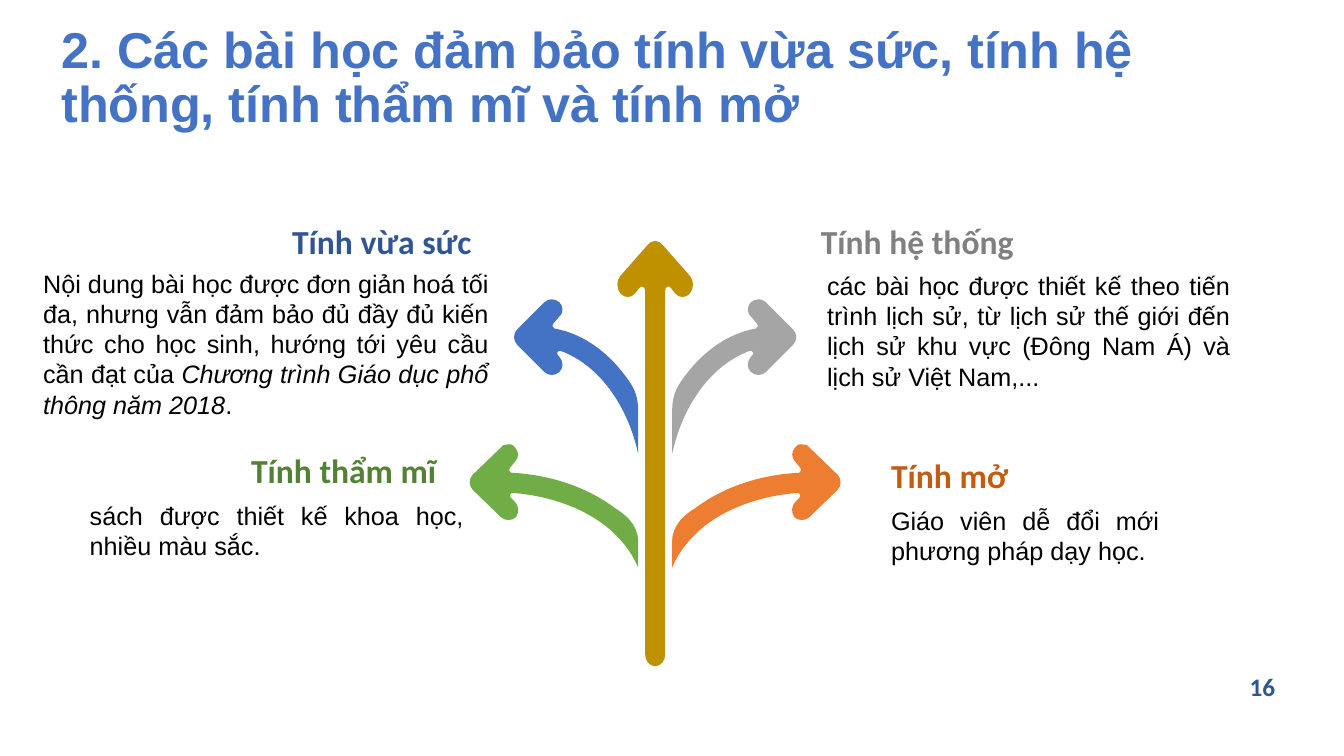
from itertools import pairwise

from lxml.etree import SubElement
from pptx import Presentation
from pptx.dml.color import RGBColor
from pptx.enum.text import MSO_ANCHOR as ANCHOR, PP_ALIGN as ALIGN
from pptx.oxml.ns import qn
from pptx.util import Pt

COLORS = {
    "title": "4472C4", "number": "2F5597", "body": "000000",
    "trunk": "BF9000", "upper_left": "4472C4", "upper_right": "A5A5A5",
    "lower_left": "70AD47", "lower_right": "ED7D31",
    "fit": "2F5597", "system": "808080", "beauty": "548235", "open": "C55A11",
}
AXIS = 468

UPPER_BRANCH = [
    (79.2, 265.7),
    (76.3, 268.6, 71.3, 268.6, 68.4, 265.7),
    (67, 264.2, 66.2, 262.8, 66.2, 260.6),
    (66.2, 258.5, 67, 256.3, 68.4, 254.9),
    (69.1, 254.2),
    (71.3, 252.7, 69.1, 249.8, 67.7, 250.6),
    (54, 255.6, 41, 265.7, 31, 280.1),
    (22.3, 292.3, 15.8, 307.4, 12.2, 324),
    (12.2, 292.3),
    (12.2, 285.1, 14.4, 277.9, 18.7, 272.2),
    (33.1, 251.3, 51.8, 238.3, 72, 234.7),
    (73.4, 234, 74.2, 231.8, 72.7, 231.1),
    (68.4, 226.1),
    (67, 225.4, 66.2, 223.2, 66.2, 221),
    (66.2, 218.9, 67, 217.4, 68.4, 216),
    (69.8, 214.6, 72, 213.8, 74.2, 213.8),
    (75.6, 213.8, 77.8, 214.6, 79.2, 216),
    (98.6, 235.4),
    (101.5, 238.3, 101.5, 243.4, 98.6, 246.2),
]
LOWER_BRANCH = [
    (130.3, 339.1),
    (133.2, 342, 133.2, 347, 130.3, 349.9),
    (110.2, 369.4),
    (107.3, 372.2, 102.2, 372.2, 99.4, 369.4),
    (97.2, 366.5, 97.2, 361.4, 100.1, 358.6),
    (103, 355.7),
    (104.4, 354.2, 103.7, 352.1, 101.5, 352.1),
    (76.3, 354.2, 52.6, 362.2, 35.3, 375.8),
    (24.5, 384.5, 16.6, 394.6, 12.2, 405.4),
    (12.2, 385.9),
    (12.2, 380.2, 15.1, 375.1, 18.7, 370.8),
    (21.6, 367.9, 25.2, 365, 28.8, 362.9),
    (49, 347.8, 74.9, 339.1, 103, 337.7),
    (104.4, 337, 105.1, 334.8, 103.7, 334.1),
    (100.1, 329.8),
    (97.2, 326.9, 97.2, 322.6, 100.1, 319.7),
    (101.5, 317.5, 103.7, 316.8, 105.8, 317.5),
    (108, 317.5, 109.4, 318.2, 110.2, 319.7),
]
TRUNK_HALF = [
    (0, 172.1),
    (2.2, 172.1, 4.3, 173.5, 5.4, 175),
    (25, 197.3),
    (27.7, 200.5, 27.7, 206, 24.8, 209.7),
    (22, 213, 17, 213, 14.5, 209.7),
    (10.8, 205.2),
    (9.4, 203.8, 7.2, 205.2, 7.2, 207.4),
    (7.2, 467.3),
    (7.2, 471.5, 4.3, 475.9, 0, 475.9),
]


def add_arrow(color, segments, side, bounds):
    near, top, far, bottom = bounds
    left, right = sorted(Pt(AXIS + side * x) for x in (near, far))
    top, bottom = Pt(top), Pt(bottom)
    builder = slide.shapes.build_freeform(left, top)
    builder.add_line_segments([(right, top), (right, bottom), (left, bottom)], close=True)
    arrow = builder.convert_to_shape()
    outline = next(arrow._element.iter(qn("a:path")))
    for corner in list(outline):
        outline.remove(corner)
    for index, segment in enumerate(segments):
        kind = "a:moveTo" if index == 0 else "a:lnTo" if len(segment) == 2 else "a:cubicBezTo"
        command = SubElement(outline, qn(kind))
        for x, y in zip(segment[::2], segment[1::2]):
            SubElement(command, qn("a:pt"), x=str(Pt(AXIS + side * x) - left), y=str(Pt(y) - top))
    SubElement(outline, qn("a:close"))
    arrow.shadow.inherit = False
    arrow.fill.solid()
    arrow.fill.fore_color.rgb = RGBColor.from_string(COLORS[color])
    arrow.line.fill.background()


def add_text(box, runs, align, anchor, margins, line_spacing, font):
    frame = slide.shapes.add_textbox(*[Pt(v) for v in box]).text_frame
    layout = {"word_wrap": True, "vertical_anchor": anchor,
              "margin_left": Pt(margins), "margin_right": Pt(margins),
              "margin_top": Pt(3.6), "margin_bottom": Pt(3.6)}
    for key, value in layout.items():
        setattr(frame, key, value)
    paragraph = frame.paragraphs[0]
    paragraph.alignment = align
    paragraph.line_spacing = line_spacing
    for words, italic in runs:
        run = paragraph.add_run()
        run.text = words
        run.font.color.rgb = RGBColor.from_string(COLORS[font["color"]])
        looks = {"name": font["name"], "size": Pt(font["size"]),
                 "bold": font["bold"], "italic": italic}
        for key, value in looks.items():
            setattr(run.font, key, value)


prs = Presentation()
prs.slide_width, prs.slide_height = Pt(960), Pt(540)
slide = prs.slides.add_slide(prs.slide_layouts[6])

add_text((36.7, 54.5, 842.4, 44.6),
         [("2. Các bài học đảm bảo tính vừa sức, tính hệ thống, tính thẩm mĩ và tính mở", False)],
         ALIGN.LEFT, ANCHOR.BOTTOM, 7.2, 0.9,
         {"name": "Arial", "size": 36, "bold": True, "color": "title"})
add_text((879.1, 475.9, 45.4, 28.8), [("16", False)],
         ALIGN.CENTER, ANCHOR.TOP, 7.2, 1.0,
         {"name": "Calibri", "size": 18, "bold": True, "color": "number"})

trunk = list(TRUNK_HALF)
for before, segment in reversed(list(pairwise(TRUNK_HALF))):
    knots = list(zip(segment[::2], segment[1::2]))
    backward = [*knots[:-1][::-1], before[-2:]]
    trunk.append(tuple(v for x, y in backward for v in (-x, y)))

upper_bounds = (12.2, 213.8, 100.8, 324)
lower_bounds = (12.2, 317.3, 132.5, 405.4)
add_arrow("upper_left", UPPER_BRANCH, -1, upper_bounds)
add_arrow("upper_right", UPPER_BRANCH, 1, upper_bounds)
add_arrow("trunk", trunk, 1, (-27.2, 172.1, 27.2, 475.9))
add_arrow("lower_right", LOWER_BRANCH, 1, lower_bounds)
add_arrow("lower_left", LOWER_BRANCH, -1, lower_bounds)

qualities = [
    ("open", "Tính mở", ALIGN.LEFT, (636.5, 321.1, 125.3, 36), (636.5, 357.1, 191.5, 72.7),
     [("Giáo viên dễ đổi mới phương pháp dạy học.", False)]),
    ("system", "Tính hệ thống", ALIGN.RIGHT, (556.2, 154.1, 167.8, 36), (590.8, 189.4, 288, 116.6),
     [("các bài học được thiết kế theo tiến trình lịch sử, từ lịch sử thế giới đến "
       "lịch sử khu vực (Đông Nam Á) và lịch sử Việt Nam,...", False)]),
    ("beauty", "Tính thẩm mĩ", ALIGN.LEFT, (179.3, 317.5, 144.7, 36), (64.1, 353.5, 267.1, 94.3),
     [("sách được thiết kế khoa học, nhiều màu sắc.", False)]),
    ("fit", "Tính vừa sức", ALIGN.RIGHT, (169.9, 154.1, 167, 36), (30.8, 187.9, 318.2, 138.2),
     [("Nội dung bài học được đơn giản hoá tối đa, nhưng vẫn đảm bảo đủ đầy đủ kiến "
       "thức cho học sinh, hướng tới yêu cầu cần đạt của ", False),
      ("Chương trình Giáo dục phổ thông năm 2018", True), (".", False)]),
]
for color, heading, align, heading_box, body_box, body in qualities:
    add_text(heading_box, [(heading, False)], align, ANCHOR.BOTTOM, 0, 1.0,
             {"name": "Calibri", "size": 24, "bold": True, "color": color})
    add_text(body_box, body, ALIGN.JUSTIFY, ANCHOR.TOP, 0, 1.0,
             {"name": "Arial", "size": 18, "bold": False, "color": "body"})

prs.save("out.pptx")
